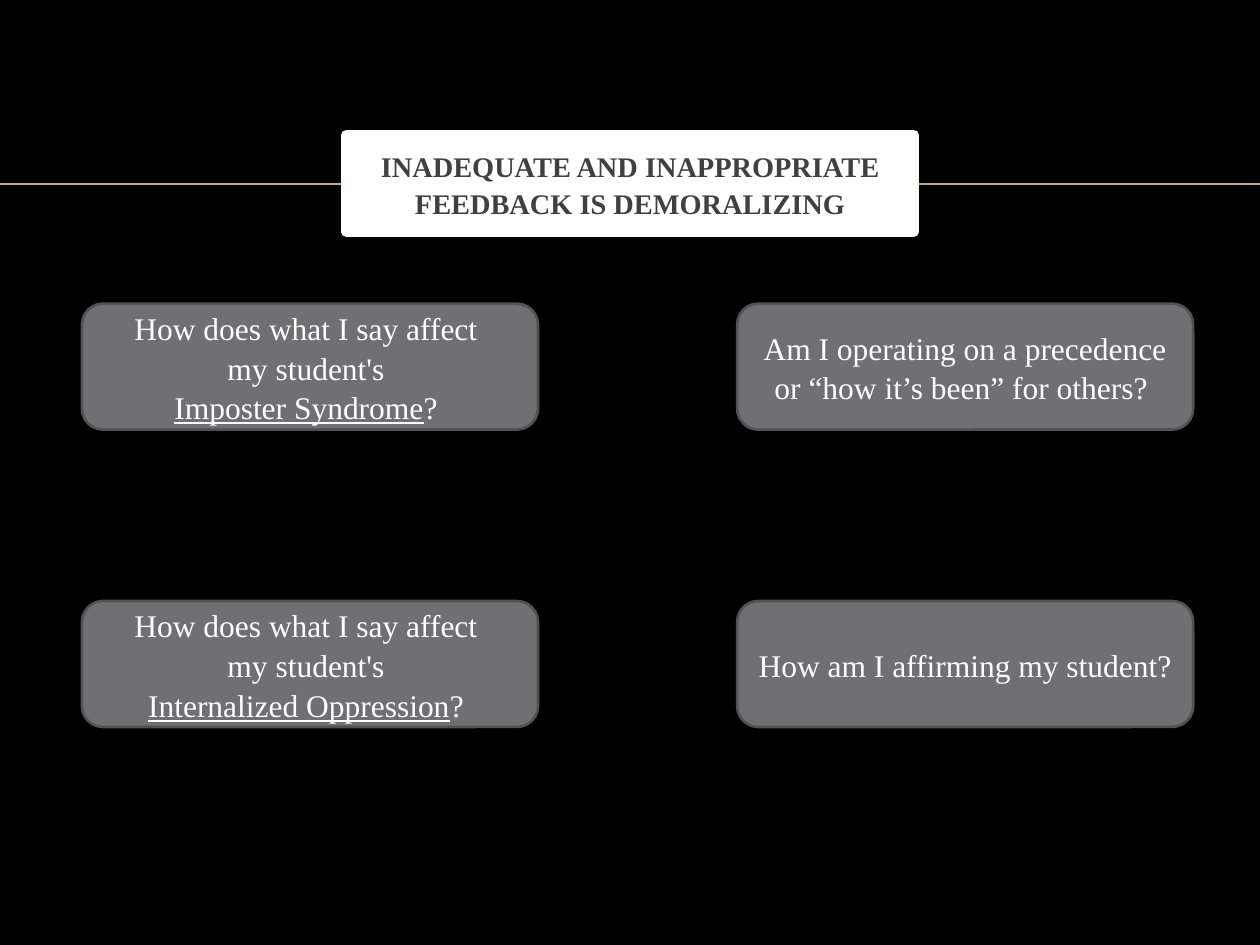
from lxml.etree import SubElement
from pptx import Presentation
from pptx.dml.color import RGBColor
from pptx.enum.shapes import MSO_CONNECTOR, MSO_SHAPE
from pptx.enum.text import MSO_ANCHOR, MSO_AUTO_SIZE, PP_ALIGN
from pptx.oxml.ns import qn
from pptx.util import Inches, Pt

BLACK = RGBColor(0x00, 0x00, 0x00)
WHITE = RGBColor(0xFF, 0xFF, 0xFF)
TAN = RGBColor(0xBB, 0xAA, 0x8A)
DARK_GRAY = RGBColor(0x40, 0x40, 0x40)
BOX_GRAY = RGBColor(0x6F, 0x6F, 0x74)
BORDER_GRAY = RGBColor(0x52, 0x52, 0x56)


def style_box(shape, fill, border, border_width):
    shape.fill.solid()
    shape.fill.fore_color.rgb = fill
    shape.line.color.rgb = border
    shape.line.width = Pt(border_width)
    frame_format = {
        "word_wrap": True,
        "auto_size": MSO_AUTO_SIZE.NONE,
        "vertical_anchor": MSO_ANCHOR.MIDDLE,
    }
    for name, value in frame_format.items():
        setattr(shape.text_frame, name, value)


def add_run(paragraph, text, color, **font_format):
    paragraph.alignment = PP_ALIGN.CENTER
    run = paragraph.add_run()
    run.text = text
    run.font.color.rgb = color
    for name, value in {"name": "Times New Roman", **font_format}.items():
        setattr(run.font, name, value)


presentation = Presentation()
presentation.slide_width = Inches(10)
presentation.slide_height = Inches(7.5)
slide = presentation.slides.add_slide(presentation.slide_layouts[5])
slide.background.fill.solid()
slide.background.fill.fore_color.rgb = BLACK

title = slide.shapes.title
title_place = {"left": 2.75, "top": 1.07, "width": 4.5, "height": 0.77}
for name, value in title_place.items():
    setattr(title, name, Inches(value))
style_box(title, WHITE, WHITE, 6)
paragraph = title.text_frame.paragraphs[0]
paragraph.line_spacing = 1.07
add_run(paragraph, "INADEQUATE AND INAPPROPRIATE FEEDBACK IS DEMORALIZING",
        DARK_GRAY, size=Pt(16.2), bold=True)

rule = slide.shapes.add_connector(
    MSO_CONNECTOR.STRAIGHT, Inches(0), Inches(1.46), Inches(10), Inches(1.46))
rule.line.color.rgb = TAN
rule.line.width = Pt(1)
SubElement(rule._element.spPr, qn("a:effectLst"))
title._element.addprevious(rule._element)

box_lefts = [0.65, 5.85]
box_tops = [2.41, 4.77]
questions = [
    [
        [["How does what I say affect "], ["my student's "], ["Imposter Syndrome", "? "]],
        [["How does what I say affect "], ["my student's "], ["Internalized Oppression", "? "]],
    ],
    [
        [["Am I operating on a precedence or “how it’s been” for others? "]],
        [["How am I affirming my student? "]],
    ],
]

for left, column in zip(box_lefts, questions):
    for top, lines in zip(box_tops, column):
        box = slide.shapes.add_shape(
            MSO_SHAPE.ROUNDED_RECTANGLE,
            Inches(left), Inches(top), Inches(3.62), Inches(1))
        box.shadow.inherit = False
        style_box(box, BOX_GRAY, BORDER_GRAY, 1.5)
        for index, texts in enumerate(lines):
            text_frame = box.text_frame
            paragraph = text_frame.add_paragraph() if index else text_frame.paragraphs[0]
            paragraph.line_spacing = 1.05
            for position, text in enumerate(texts):
                underlined = len(texts) > 1 and position == 0
                add_run(paragraph, text, WHITE, size=Pt(18), underline=underlined)

presentation.save("out.pptx")
